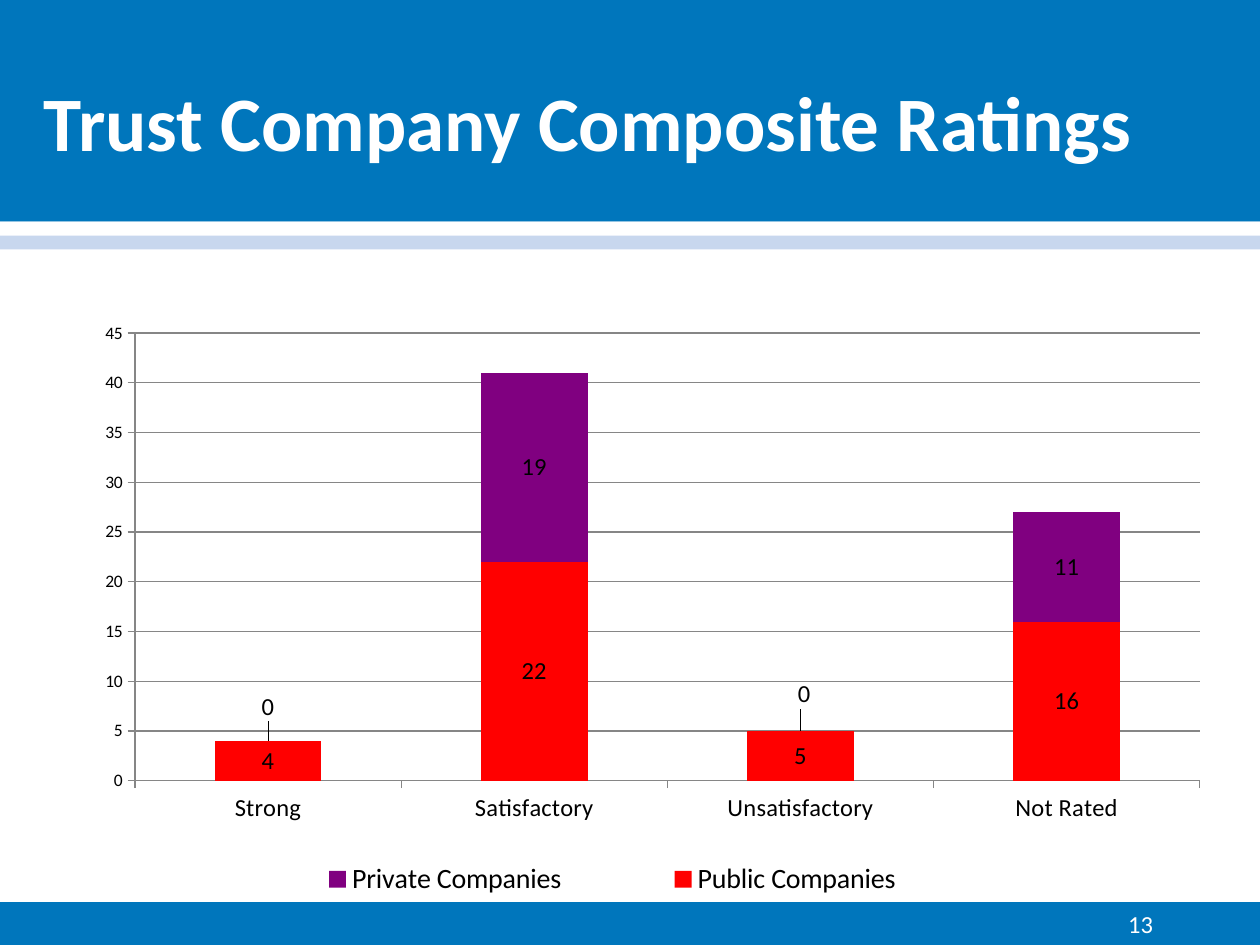
"""Build the trust company composite ratings slide."""
from lxml.etree import SubElement
from pptx import Presentation
from pptx.chart.data import CategoryChartData
from pptx.dml.color import RGBColor
from pptx.enum.chart import XL_CHART_TYPE, XL_LABEL_POSITION, XL_LEGEND_POSITION, XL_TICK_MARK
from pptx.enum.shapes import MSO_SHAPE
from pptx.enum.text import MSO_ANCHOR, PP_ALIGN
from pptx.oxml.ns import qn
from pptx.util import Inches, Pt

COLORS = {
    "backdrop": "969696", "white": "FFFFFF", "blue": "0076BC", "pale": "C8D7EE",
    "black": "000000", "grid": "868686", "public": "FF0000", "private": "800080",
}
FONT = "Calibri"


def style_font(font, size, color="black", bold=False):
    formats = {"name": FONT, "size": Pt(size), "bold": bold}
    for attribute, value in formats.items():
        setattr(font, attribute, value)
    font.color.rgb = RGBColor.from_string(COLORS[color])


def set_layout(parent, position, values):
    for old_layout in parent.findall(qn("c:layout")):
        parent.remove(old_layout)
    layout = SubElement(parent, qn("c:layout"))
    parent.insert(position, layout)
    manual = SubElement(layout, qn("c:manualLayout"))
    for tag, value in values.items():
        SubElement(manual, qn(f"c:{tag}")).set("val", str(value))


presentation = Presentation()
presentation.slide_width = Inches(10)
presentation.slide_height = Inches(7.5)
slide = presentation.slides.add_slide(presentation.slide_layouts[6])
slide.background.fill.solid()
slide.background.fill.fore_color.rgb = RGBColor.from_string(COLORS["backdrop"])

bands = [
    (1.5, 6, "white"), (7.16, 0.34, "blue"), (0, 1.76, "blue"),
    (1.76, 0.11, "white"), (1.87, 0.11, "pale"),
]
for top, height, color in bands:
    shape = slide.shapes.add_shape(
        MSO_SHAPE.RECTANGLE, Inches(0), Inches(top), Inches(10), Inches(height)
    )
    shape.shadow.inherit = False
    shape.fill.solid()
    shape.fill.fore_color.rgb = RGBColor.from_string(COLORS[color])
    shape.line.fill.background()

texts = [
    ("Trust Company Composite Ratings", (0.25, 0.33, 9.42, 1.25), 44, True,
     MSO_ANCHOR.MIDDLE, PP_ALIGN.LEFT),
    ("13", (7.17, 7, 2.08, 0.5), 14, False, MSO_ANCHOR.BOTTOM, PP_ALIGN.RIGHT),
]
for text, box, size, bold, anchor, alignment in texts:
    frame = slide.shapes.add_textbox(*map(Inches, box)).text_frame
    frame.word_wrap = True
    frame.vertical_anchor = anchor
    paragraph = frame.paragraphs[0]
    paragraph.alignment = alignment
    run = paragraph.add_run()
    run.text = text
    style_font(run.font, size, "white", bold)

chart_data = CategoryChartData()
chart_data.categories = ["Strong", "Satisfactory", "Unsatisfactory", "Not Rated"]
chart_data.add_series("Public Companies", [4, 22, 5, 16])
chart_data.add_series("Private Companies", [0, 19, 0, 11])
chart = slide.shapes.add_chart(
    XL_CHART_TYPE.COLUMN_STACKED, Inches(0), Inches(2.05), Inches(9.92), Inches(5.12), chart_data
).chart
chart.has_title = False
style_font(chart.font, 10)
set_layout(chart.plots[0]._element.getparent(), 0, {
    "layoutTarget": "inner", "xMode": "edge", "yMode": "edge",
    "x": 0.108, "y": 0.116, "w": 0.852, "h": 0.694,
})

plot = chart.plots[0]
for attribute, value in {"gap_width": 150, "overlap": 100, "vary_by_categories": False}.items():
    setattr(plot, attribute, value)

for series, color in zip(plot.series, ("public", "private")):
    series.format.fill.solid()
    series.format.fill.fore_color.rgb = RGBColor.from_string(COLORS[color])
    series.format.line.fill.background()
    series.data_labels.show_value = True
    series.data_labels.position = XL_LABEL_POSITION.CENTER
    style_font(series.data_labels.font, 14)

private_series = plot.series[1]
for index, shift in {0: (0, -0.05), 2: (0.003, -0.06)}.items():
    label = private_series.points[index].data_label
    style_font(label.font, 14)
    label.position = XL_LABEL_POSITION.CENTER
for label_element, shift in zip(
    private_series._element.iter(qn("c:dLbl")), ((0, -0.053), (0.003, -0.057))
):
    set_layout(label_element, 1, dict(zip("xy", shift)))

for axis, size in ((chart.category_axis, 14), (chart.value_axis, 10)):
    axis.major_tick_mark = XL_TICK_MARK.OUTSIDE
    axis.minor_tick_mark = XL_TICK_MARK.NONE
    style_font(axis.tick_labels.font, size)
    axis.format.line.color.rgb = RGBColor.from_string(COLORS["grid"])
    axis.format.line.width = Pt(0.75)

value_axis = chart.value_axis
for attribute, value in {"minimum_scale": 0, "maximum_scale": 45, "major_unit": 5}.items():
    setattr(value_axis, attribute, value)
value_axis.has_major_gridlines = True
gridline = value_axis.major_gridlines.format.line
gridline.color.rgb = RGBColor.from_string(COLORS["grid"])
gridline.width = Pt(0.75)

chart.has_legend = True
chart.legend.position = XL_LEGEND_POSITION.RIGHT
chart.legend.include_in_layout = False
style_font(chart.legend.font, 16)
set_layout(chart.legend._element, 1, {
    "xMode": "edge", "yMode": "edge", "x": 0.18, "y": 0.93, "w": 0.62, "h": 0.07,
})

presentation.save("out.pptx")
